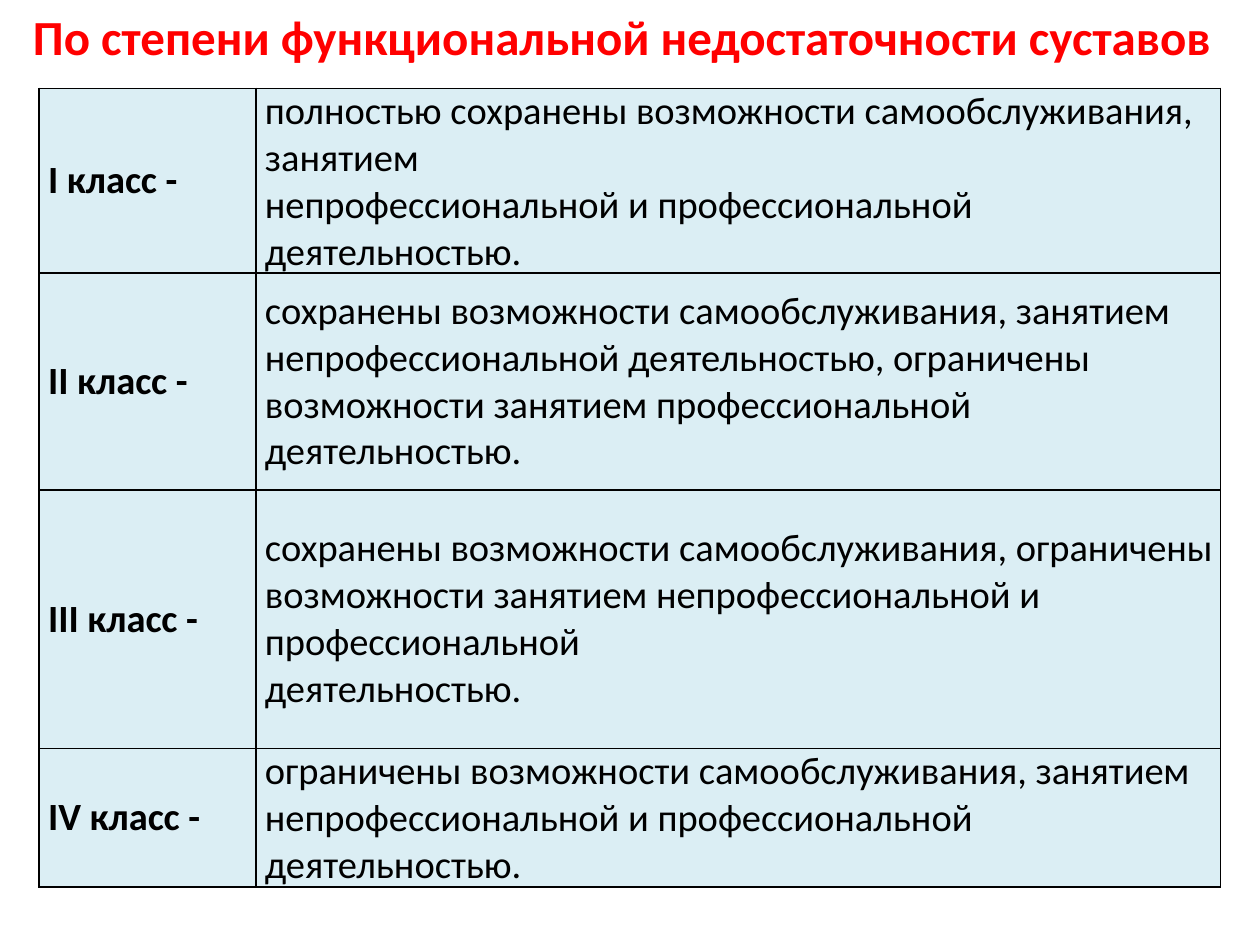
from lxml import etree
from pptx import Presentation
from pptx.dml.color import RGBColor
from pptx.enum.text import MSO_ANCHOR, MSO_AUTO_SIZE, PP_ALIGN
from pptx.oxml.ns import qn
from pptx.util import Cm, Pt

LEFT = PP_ALIGN.LEFT
TOP, MIDDLE = MSO_ANCHOR.TOP, MSO_ANCHOR.MIDDLE
FIT_SHAPE = MSO_AUTO_SIZE.SHAPE_TO_FIT_TEXT
TITLE_ONLY = 5

FONT = "Calibri"
RED, BLACK, PALE_BLUE = "FF0000", "000000", "DBEEF4"

TITLE = "По степени функциональной недостаточности суставов"
CLASSES = [
    ("I класс -",
     ["полностью сохранены возможности самообслуживания, занятием",
      "непрофессиональной и профессиональной деятельностью."]),
    ("II класс -",
     ["сохранены возможности самообслуживания, занятием",
      "непрофессиональной деятельностью, ограничены возможности "
      "занятием профессиональной деятельностью."]),
    ("III класс -",
     ["сохранены возможности самообслуживания, ограничены возможности "
      "занятием непрофессиональной и профессиональной",
      "деятельностью."]),
    ("IV класс -",
     ["ограничены возможности самообслуживания, занятием",
      "непрофессиональной и профессиональной деятельностью."]),
]
COLUMN_WIDTHS = [Cm(4.37), Cm(19.44)]
ROW_HEIGHTS = [Cm(2.77), Cm(4.37), Cm(5.21), Cm(2.44)]
TEXT_INDENT = Cm(0.18)


def rgb(color):
    return RGBColor.from_string(color)


def set_font(paragraph, size, color, bold):
    font = paragraph.font
    font.name, font.size, font.bold = FONT, Pt(size), bold
    font.color.rgb = rgb(color)


def add_title(slide):
    title = slide.shapes.title
    title.left, title.top, title.width, title.height = Cm(0.41), 0, Cm(24.99), Cm(1.45)
    frame = title.text_frame
    frame.text = TITLE
    frame.vertical_anchor = TOP
    frame.auto_size = FIT_SHAPE
    heading = frame.paragraphs[0]
    heading.alignment = LEFT
    set_font(heading, 28, RED, True)


def add_borders(cell, color, width):
    """Outline the cell; border elements must precede its fill."""
    properties = cell._tc.get_or_add_tcPr()
    for position, side in enumerate(("lnL", "lnR", "lnT", "lnB")):
        line = etree.Element(qn(f"a:{side}"), w=str(Pt(width)))
        fill = etree.SubElement(line, qn("a:solidFill"))
        etree.SubElement(fill, qn("a:srgbClr"), val=color)
        properties.insert(position, line)


def fill_cell(cell, lines, bold):
    cell.margin_left = cell.margin_right = cell.margin_top = cell.margin_bottom = 0
    cell.vertical_anchor = MIDDLE
    cell.fill.solid()
    cell.fill.fore_color.rgb = rgb(PALE_BLUE)
    add_borders(cell, BLACK, 1)
    cell.text = "\n".join(lines)
    for paragraph in cell.text_frame.paragraphs:
        set_font(paragraph, 22, BLACK, bold)
        paragraph._p.get_or_add_pPr().set("marL", str(TEXT_INDENT))


def add_class_table(slide):
    table = slide.shapes.add_table(
        len(CLASSES), len(COLUMN_WIDTHS), Cm(0.79), Cm(1.78),
        sum(COLUMN_WIDTHS), sum(ROW_HEIGHTS)).table
    table.first_row = table.horz_banding = False
    for column, width in zip(table.columns, COLUMN_WIDTHS):
        column.width = width
    for index, (label, description) in enumerate(CLASSES):
        table.rows[index].height = ROW_HEIGHTS[index]
        fill_cell(table.cell(index, 0), [label], True)
        fill_cell(table.cell(index, 1), description, False)


def main():
    presentation = Presentation()
    presentation.slide_width, presentation.slide_height = Cm(25.4), Cm(19.05)
    slide = presentation.slides.add_slide(presentation.slide_layouts[TITLE_ONLY])
    add_title(slide)
    add_class_table(slide)
    presentation.save("out.pptx")


if __name__ == "__main__":
    main()
